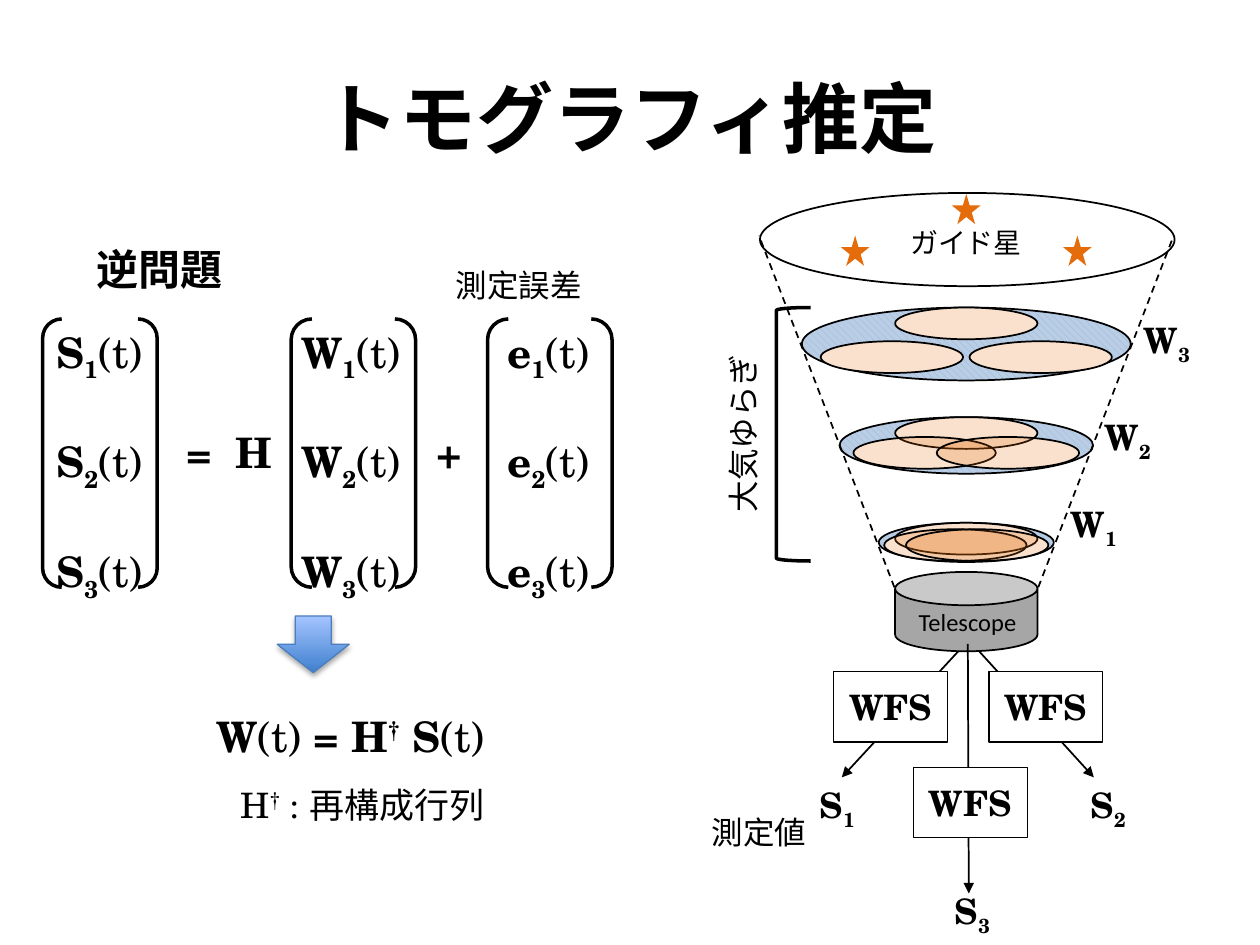
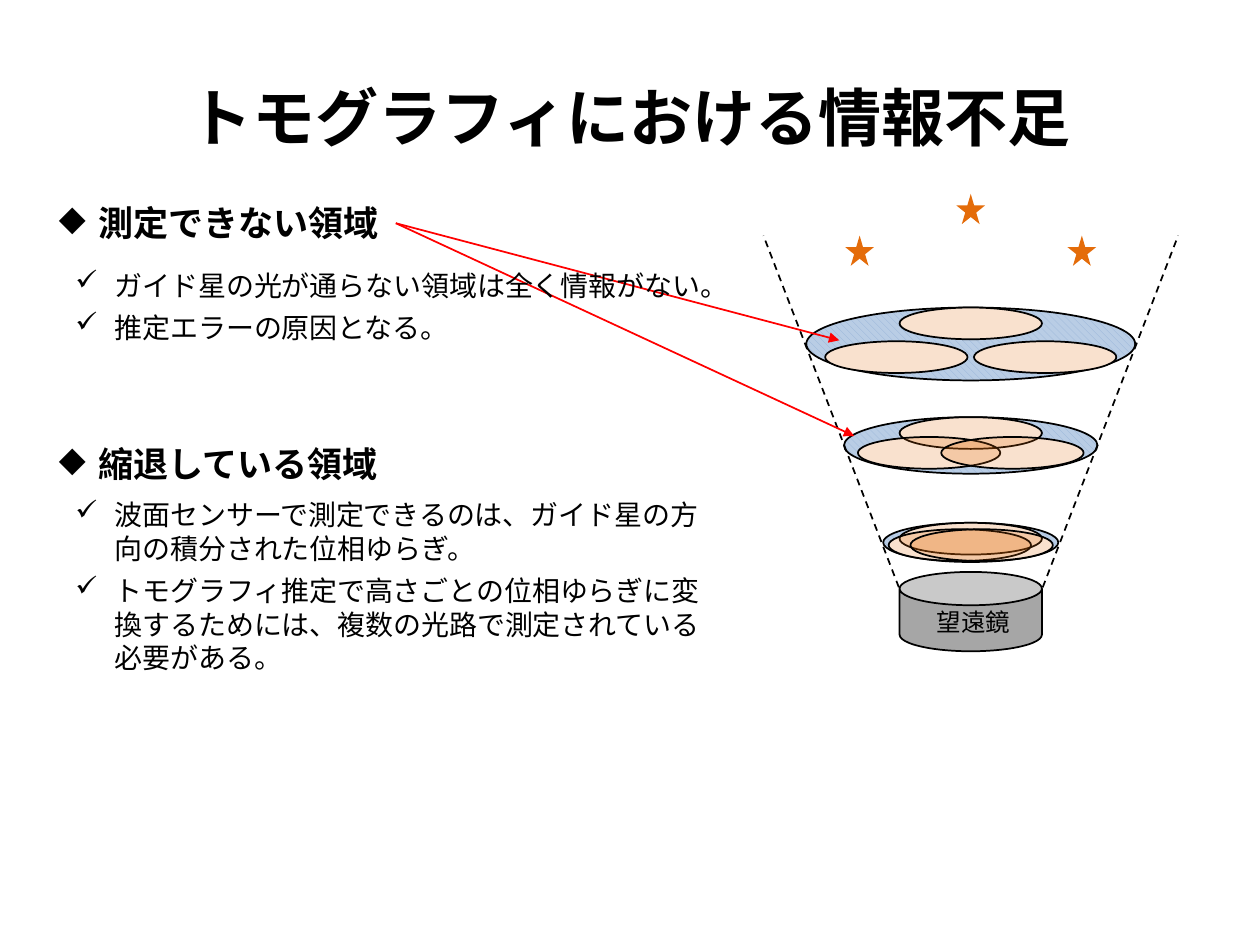
"""Build two slides on tomographic estimation of atmospheric turbulence."""
from dataclasses import dataclass

from lxml import etree
from pptx import Presentation
from pptx.dml.color import RGBColor
from pptx.enum.dml import MSO_LINE, MSO_PATTERN
from pptx.enum.shapes import MSO_CONNECTOR, MSO_SHAPE
from pptx.enum.text import MSO_ANCHOR, MSO_AUTO_SIZE, PP_ALIGN
from pptx.oxml.ns import qn
from pptx.util import Cm, Pt

CENTER, LEFT = PP_ALIGN.CENTER, PP_ALIGN.LEFT
MIDDLE, TOP = MSO_ANCHOR.MIDDLE, MSO_ANCHOR.TOP
FIT, FIXED = MSO_AUTO_SIZE.SHAPE_TO_FIT_TEXT, MSO_AUTO_SIZE.NONE
ELLIPSE, RECTANGLE, STAR = MSO_SHAPE.OVAL, MSO_SHAPE.RECTANGLE, MSO_SHAPE.STAR_5_POINT
CAN, DOWN_ARROW = MSO_SHAPE.CAN, MSO_SHAPE.DOWN_ARROW
BRACKET_PAIR, LEFT_BRACKET = MSO_SHAPE.DOUBLE_BRACKET, MSO_SHAPE.LEFT_BRACKET
STRAIGHT, DASH = MSO_CONNECTOR.STRAIGHT, MSO_LINE.DASH
DIAGONAL = MSO_PATTERN.WIDE_DOWNWARD_DIAGONAL


@dataclass(frozen=True)
class Theme:
    """Hold the fonts, colours and type sizes of the deck."""
    cjk: str = "Noto Sans CJK JP"
    serif: str = "TeX Gyre Schola"
    sans: str = "Calibri"
    ink: str = "000000"
    paper: str = "FFFFFF"
    star: str = "E46C0A"
    telescope: str = "A6A6A6"
    stripe: str = "95B3D7"
    layer: str = "B9CDE5"
    alert: str = "FF0000"
    arrow_dark: str = "3F80CE"
    arrow_light: str = "A4C4FF"
    arrow_edge: str = "4B7EBC"
    title: int = 44
    long_title: int = 36
    formula: int = 24
    heading: int = 20
    label: int = 18
    body: int = 16
    caption: int = 14


THEME = Theme()
AXIS = 19.48
BEAM_WIDTH, BEAM_HEIGHT = 2.87, 0.64
SUBSCRIPT, SUPERSCRIPT = -25, 30


def color(code):
    """Turn a hex code into a colour."""
    return RGBColor.from_string(code)


def apply_format(target, values):
    """Set attributes of the target from a dict."""
    for name, value in values.items():
        setattr(target, name, value)


def add_element(parent, tag, **attributes):
    """Append an XML element with the given attributes."""
    element = etree.SubElement(parent, qn(tag))
    for name, value in attributes.items():
        element.set(name, str(value))
    return element


def write_spans(para, spans, font, size, bold):
    """Write (text, bold, baseline) spans or a plain string into a paragraph."""
    if isinstance(spans, str):
        spans = [(spans, bold, 0)]
    for text, heavy, baseline in spans:
        span = para.add_run()
        span.text = text
        apply_format(span.font, {"name": font, "size": Pt(size), "bold": heavy})
        span.font.color.rgb = color(THEME.ink)
        properties = span._r.get_or_add_rPr()
        add_element(properties, "a:ea", typeface=THEME.cjk)
        if baseline:
            properties.set("baseline", str(baseline * 1000))


def add_text(page, place, paras, size, font=THEME.cjk, bold=False, align=LEFT,
             wrap=False, gap=0, anchor=TOP, fit=FIT, bullet=None):
    """Add a text box with one or more paragraphs."""
    box = page.shapes.add_textbox(*map(Cm, place))
    frame = box.text_frame
    apply_format(frame, {"word_wrap": wrap, "auto_size": fit, "vertical_anchor": anchor})
    for index, spans in enumerate(paras):
        para = frame.paragraphs[0] if index == 0 else frame.add_paragraph()
        para.alignment = align
        if gap and (index or bullet):
            para.space_before = Pt(gap)
        if bullet:
            properties = para._p.get_or_add_pPr()
            properties.set("marL", str(Cm(0.79)))
            properties.set("indent", str(-Cm(0.79)))
            add_element(properties, "a:buChar", char=bullet)
        write_spans(para, spans, font, size, bold)
    return box


def add_title(page, text, size):
    """Add the slide title."""
    add_text(page, (1.27, 0.76, 22.86, 3.18), [text], size, bold=True, align=CENTER,
             wrap=True, anchor=MIDDLE, fit=FIXED)


def add_figure(page, kind, place, fill=None, line=None, width=1.0, alpha=None):
    """Add a preset shape with an optional fill and outline."""
    figure = page.shapes.add_shape(kind, *map(Cm, place))
    figure.shadow.inherit = False
    if fill:
        figure.fill.solid()
        figure.fill.fore_color.rgb = color(fill)
    else:
        figure.fill.background()
    if alpha:
        tint = figure.fill._xPr.find(".//" + qn("a:srgbClr"))
        add_element(tint, "a:alpha", val=alpha * 1000)
    if line:
        figure.line.color.rgb = color(line)
        figure.line.width = Pt(width)
    else:
        figure.line.fill.background()
    return figure


def add_line(page, start, end, ink=THEME.ink, dash=None, arrow=True):
    """Add a straight line, by default with an arrowhead at its end."""
    line = page.shapes.add_connector(STRAIGHT, *map(Cm, start + end))
    line.line.color.rgb = color(ink)
    line.line.width = Pt(1)
    if dash:
        line.line.dash_style = dash
    if arrow:
        add_element(line.line._get_or_add_ln(), "a:tailEnd", type="triangle")
    add_element(line._element.spPr, "a:effectLst")


def indexed(letter, index):
    """Return spans for a bold symbol with a subscript."""
    return [(letter, True, 0), (str(index), True, SUBSCRIPT)]


def add_symbol(page, letter, index, left, top, width):
    """Add a subscripted symbol beside the diagram."""
    add_text(page, (left, top, width, 1.12), [indexed(letter, index)],
             THEME.heading, THEME.serif)


def add_vector(page, letter, text_place, bracket_place, align=LEFT):
    """Add a bracketed column vector of three time-dependent components."""
    rows = [indexed(letter, index) + [("(t)", False, 0)] for index in (1, 2, 3)]
    left, width = text_place
    add_text(page, (left, 6.45, width, 5.38), rows, THEME.formula, THEME.serif,
             align=align, gap=30)
    left, width = bracket_place
    add_figure(page, BRACKET_PAIR, (left, 6.43, width, 5.41), line=THEME.ink, width=2)


def add_sensor(page, left, top):
    """Add a wavefront sensor box."""
    box = add_figure(page, RECTANGLE, (left, top, 2.29, 1.42), THEME.paper, THEME.ink, 0.75)
    box.text_frame.vertical_anchor = MIDDLE
    para = box.text_frame.paragraphs[0]
    para.alignment = CENTER
    write_spans(para, "WFS", THEME.serif, THEME.heading, True)


def add_down_arrow(page):
    """Add the shaded arrow that leads to the solution."""
    arrow = add_figure(page, DOWN_ARROW, (5.59, 12.42, 1.45, 1.14),
                       line=THEME.arrow_edge, width=0.75)
    arrow.fill.gradient()
    arrow.fill.gradient_angle = 90
    for stop, code in zip(arrow.fill.gradient_stops, (THEME.arrow_dark, THEME.arrow_light)):
        stop.color.rgb = color(code)
    effects = arrow._element.spPr.find(qn("a:effectLst"))
    shadow = add_element(effects, "a:outerShdw", blurRad=Pt(3.1), dist=Pt(1.8),
                         dir=5400000, rotWithShape=0)
    add_element(add_element(shadow, "a:srgbClr", val=THEME.ink), "a:alpha", val=35000)


def add_light_cone(page, shift=0.0):
    """Add guide stars, turbulent layers and the telescope as one group."""
    group = page.shapes.add_group_shape()
    layers = [(10.54, 3.53, 0.79, 10.67, 0.22),
              (8.41, 5.11, 1.14, 8.81, 0.84),
              (6.2, 6.63, 1.47, 6.88, 1.5)]
    beams = []
    for top, width, height, side_top, spread in layers:
        layer = add_figure(group, ELLIPSE, (AXIS - width / 2, top, width, height),
                           line=THEME.ink)
        layer.fill.patterned()
        layer.fill.pattern = DIAGONAL
        layer.fill.fore_color.rgb = color(THEME.stripe)
        layer.fill.back_color.rgb = color(THEME.layer)
        beams += [(0, top), (-spread, side_top), (spread, side_top)]
    for side in (-1, 1):
        add_line(group, (AXIS + side * 1.45, 11.84), (AXIS + side * 4.18, 4.75),
                 dash=DASH, arrow=False)
    for fill, line, alpha in ((THEME.paper, None, None), (THEME.star, THEME.ink, 20)):
        for offset, top in beams:
            place = (AXIS + offset - BEAM_WIDTH / 2, top, BEAM_WIDTH, BEAM_HEIGHT)
            add_figure(group, ELLIPSE, place, fill, line, alpha=alpha)
    for offset, top in ((0, 3.91), (-2.24, 4.75), (2.24, 4.75)):
        add_figure(group, STAR, (AXIS + offset - 0.29, top, 0.58, 0.61), THEME.star)
    can = add_figure(group, CAN, (AXIS - BEAM_WIDTH / 2, 11.53, BEAM_WIDTH, 1.6),
                     THEME.telescope, THEME.ink)
    can.adjustments[0] = 0.42
    group.left += Cm(shift)


def build_estimation(page):
    """Lay out the inverse problem beside the measurement diagram."""
    add_title(page, "トモグラフィ推定", THEME.title)
    for end in ((16.97, 15.67), (22.05, 15.67)):
        add_line(page, (19.53, 12.9), end)
    add_sensor(page, 16.81, 13.54)
    add_sensor(page, 19.94, 13.54)
    for symbol in (("S", 1, 16.28, 15.67, 1.27), ("S", 2, 21.74, 15.67, 1.27),
                   ("W", 1, 21.34, 10.01, 1.52), ("W", 2, 22.02, 8.26, 1.52),
                   ("W", 3, 22.81, 6.3, 1.52)):
        add_symbol(page, *symbol)
    for text, left, width in (("=", 3.51, 1.04), ("H", 4.5, 1.24), ("+", 8.56, 1.04)):
        add_text(page, (left, 8.48, width, 1.27), [text], THEME.formula, THEME.serif, True)
    add_vector(page, "S", (0.76, 2.49), (0.86, 2.31), CENTER)
    add_vector(page, "W", (5.82, 2.62), (5.87, 2.51))
    add_vector(page, "e", (9.98, 2.24), (9.83, 2.51))
    add_text(page, (14.1, 16.26, 2.44, 1.02), ["測定値"], THEME.label)
    add_text(page, (1.7, 4.78, 3.07, 1.27), ["逆問題"], THEME.formula, bold=True)
    add_text(page, (8.94, 5.23, 3.07, 1.02), ["測定誤差"], THEME.label)
    add_down_arrow(page)
    solution = [("W", True, 0), ("(t)", False, 0), (" = H", True, 0),
                ("†", True, SUPERSCRIPT), (" S", True, 0), ("(t)", False, 0)]
    add_text(page, (4.11, 14.2, 6.17, 1.27), [solution], THEME.formula, THEME.serif)
    meaning = [("H", False, 0), ("†", False, SUPERSCRIPT), (" : 再構成行列", False, 0)]
    add_text(page, (4.6, 15.67, 5.51, 1.12), [meaning], THEME.heading, THEME.serif, wrap=True)
    add_light_cone(page)
    add_figure(page, ELLIPSE, (15.32, 3.89, 8.36, 1.88), line=THEME.ink)
    add_text(page, (18.21, 12.12, 2.59, 0.86), ["Telescope"], THEME.caption, THEME.sans,
             align=CENTER)
    add_text(page, (18.08, 4.42, 2.79, 0.94), ["ガイド星"], THEME.body, align=CENTER)
    add_figure(page, LEFT_BRACKET, (15.65, 6.2, 0.69, 5.11), line=THEME.ink, width=2)
    turbulence = add_text(page, (13.13, 8.23, 3.71, 1.02), ["大気ゆらぎ"], THEME.label,
                          align=CENTER)
    turbulence.rotation = 270
    add_line(page, (19.51, 12.98), (19.53, 18.01))
    add_sensor(page, 18.42, 15.47)
    add_symbol(page, "S", 3, 19.0, 17.81, 1.27)


def build_shortage(page):
    """Lay out the two kinds of missing information."""
    add_light_cone(page, 0.09)
    add_title(page, "トモグラフィにおける情報不足", THEME.long_title)
    for end in ((16.92, 6.86), (17.22, 8.79)):
        add_line(page, (7.98, 4.5), end, THEME.alert)
    topics = [
        ("測定できない領域", 3.94, 5.28, 1.8,
         ["ガイド星の光が通らない領域は全く情報がない。", "推定エラーの原因となる。"]),
        ("縮退している領域", 8.79, 9.91, 3.86,
         ["波面センサーで測定できるのは、ガイド星の方向の積分された位相ゆらぎ。",
          "トモグラフィ推定で高さごとの位相ゆらぎに変換するためには、"
          "複数の光路で測定されている必要がある。"]),
    ]
    for heading, heading_top, body_top, height, points in topics:
        add_text(page, (0.94, heading_top, 7.04, 1.12), [heading], THEME.heading,
                 bold=True, bullet="◆")
        add_text(page, (1.27, body_top, 13.41, height), points, THEME.body, wrap=True,
                 gap=5, bullet="✓")
    add_text(page, (18.62, 12.12, 2.01, 0.86), ["望遠鏡"], THEME.caption, THEME.sans,
             align=CENTER)


def main():
    """Build and save the deck."""
    deck = Presentation()
    apply_format(deck, {"slide_width": Cm(25.4), "slide_height": Cm(19.05)})
    for build in (build_estimation, build_shortage):
        build(deck.slides.add_slide(deck.slide_layouts[6]))
    deck.save("out.pptx")


if __name__ == "__main__":
    main()
